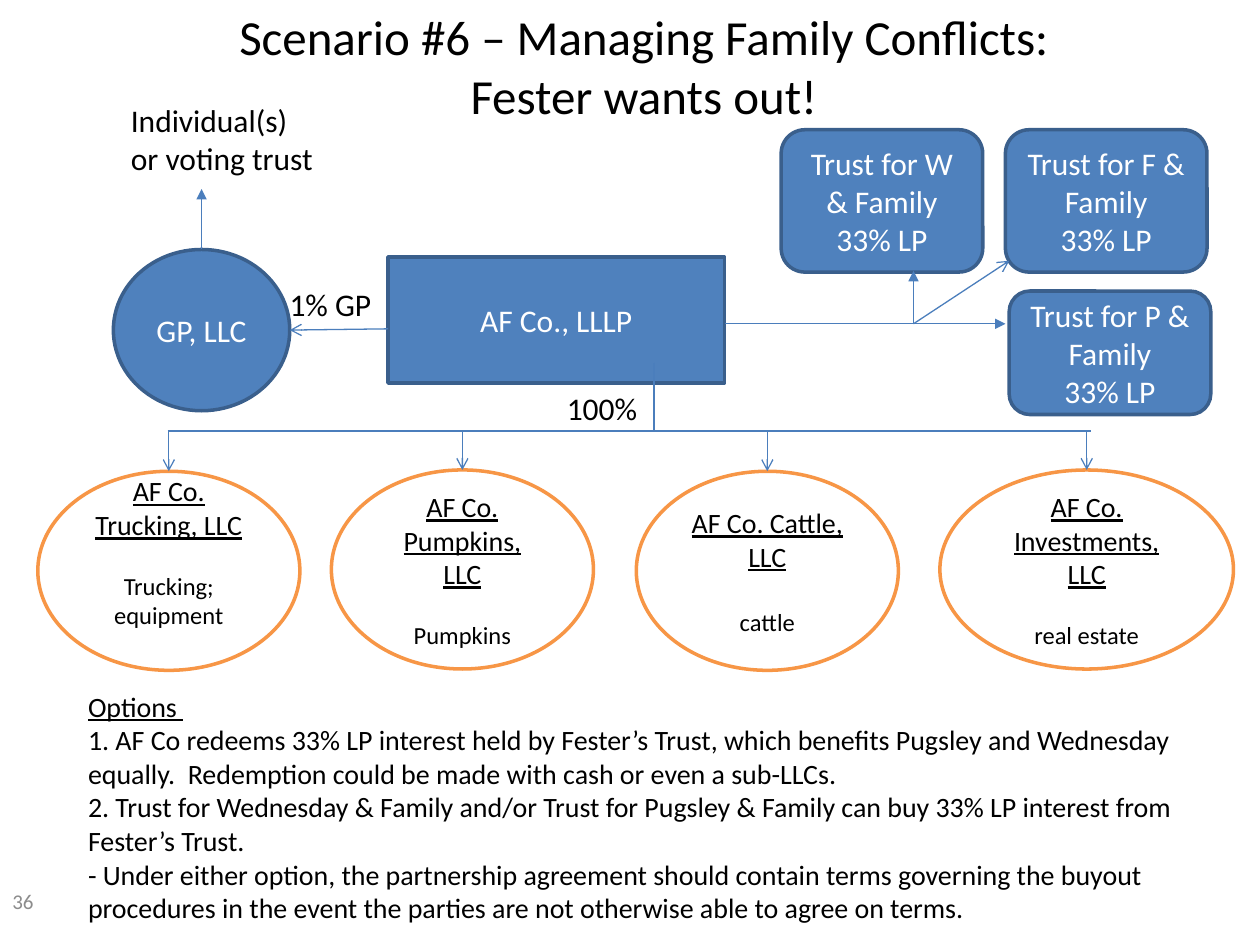
"""Build the family conflict slide: ownership chart above, buyout options below."""
from dataclasses import dataclass

from lxml.etree import SubElement
from pptx import Presentation
from pptx.dml.color import RGBColor as Color
from pptx.enum.shapes import MSO_CONNECTOR as Connector, MSO_SHAPE as Shape
from pptx.enum.text import MSO_ANCHOR as Anchor, PP_ALIGN as Align
from pptx.oxml.ns import qn
from pptx.util import Inches, Pt


@dataclass(frozen=True)
class Theme:
    font: str = "Calibri"
    black: str = "000000"
    white: str = "FFFFFF"
    grey: str = "8C8C8C"
    blue: str = "4F81BD"
    navy: str = "3A5F8C"
    orange: str = "F79646"
    wire: str = "4B7EBC"
    title: int = 28
    label: int = 18
    body: int = 16
    detail: int = 14
    number: int = 12
    outline: float = 2
    hairline: float = 0.75


theme = Theme()
presentation = Presentation()
presentation.slide_width, presentation.slide_height = Inches(10), Inches(7.5)
slide = presentation.slides.add_slide(presentation.slide_layouts[6])
column = presentation.slide_width / 100
row = presentation.slide_height / 75


def add_text(place, lines, size, color=theme.black, align=Align.LEFT, anchor=Anchor.TOP, look=None):
    """Add a text box, or a shape when look gives (preset, fill, outline)."""
    left, top, width, height = place
    box = (round(left * column), round(top * row), round(width * column), round(height * row))
    if look:
        preset, fill, outline = look
        shape = slide.shapes.add_shape(preset, *box)
        shape.shadow.inherit = False
        shape.fill.solid()
        shape.fill.fore_color.rgb = Color.from_string(fill)
        shape.line.color.rgb = Color.from_string(outline)
        shape.line.width = Pt(theme.outline)
    else:
        shape = slide.shapes.add_textbox(*box)
    frame = shape.text_frame
    frame.word_wrap = True
    frame.vertical_anchor = anchor
    frame.text = "\n".join(lines)
    for paragraph in frame.paragraphs:
        paragraph.alignment = align
        paragraph.font.name = theme.font
        paragraph.font.size = Pt(size)
        paragraph.font.color.rgb = Color.from_string(color)
    return shape


def add_line(start, end, head=None, source=None, target=None):
    """Add a thin line, optionally with an arrowhead and joined to shape tops."""
    line = slide.shapes.add_connector(
        Connector.STRAIGHT, round(start[0] * column), round(start[1] * row),
        round(end[0] * column), round(end[1] * row))
    if source:
        line.begin_connect(source, 0)
    if target:
        line.end_connect(target, 0)
    line.line.color.rgb = Color.from_string(theme.wire)
    line.line.width = Pt(theme.hairline)
    if head:
        SubElement(line.line._get_or_add_ln(), qn("a:tailEnd"), type=head)
    SubElement(line._element.spPr, qn("a:effectLst"))


add_text((6.1, 0.8, 90, 8.8), ["Scenario #6 – Managing Family Conflicts:\vFester wants out!"],
         theme.title, align=Align.CENTER, anchor=Anchor.MIDDLE)

# Partnership, general partner and limited partners
owners = [
    (Shape.RECTANGLE, (30.8, 20.4, 26.7, 10), ["AF Co., LLLP"]),
    (Shape.OVAL, (9, 19.8, 14, 12.8), ["GP, LLC"]),
    (Shape.ROUNDED_RECTANGLE, (62, 10.3, 16, 11.3), ["Trust for W & Family", "33% LP"]),
    (Shape.ROUNDED_RECTANGLE, (79.8, 10.3, 16, 11.3), ["Trust for F & Family", "33% LP"]),
    (Shape.ROUNDED_RECTANGLE, (80.1, 23.1, 16, 9.8), ["Trust for P & Family", "33% LP"]),
]
partnership, general_partner, *trusts = [
    add_text(place, lines, theme.label, theme.white, Align.CENTER, Anchor.MIDDLE,
             (preset, theme.blue, theme.navy))
    for preset, place, lines in owners]

add_line((16, 19.8), (16, 15), "triangle", source=general_partner)
add_line((30.8, 26.1), (23, 26.2), "arrow")
hub = (72.5, 25.7)
add_line(hub, (57.5, 25.7))
for end, head in [((80.1, 20.7), "arrow"), ((72.5, 21.5), "triangle"), ((79.8, 25.7), "triangle")]:
    add_line(hub, end, head)

# Subsidiaries hang from one rail: left, top, width, gap in points, bottom inset, texts
rail = 34.2
add_line((13.3, rail), (86.6, rail))
add_line((51.9, 28.8), (51.9, rail))
subsidiaries = [
    (3, 37.4, 20.8, 17, 0.35, "AF Co. Trucking, LLC", "Trucking; equipment"),
    (26.3, 37.3, 20.8, 17, 0.05, "AF Co. Pumpkins, LLC", "Pumpkins"),
    (50.5, 37.4, 20.8, 19.5, 0.05, "AF Co. Cattle, LLC", "cattle"),
    (74.6, 37.3, 23.3, 17, 0.05, "AF Co. Investments, LLC", "real estate"),
]
for left, top, width, gap, inset, company, business in subsidiaries:
    oval = add_text((left, top, width, 15.8), [company, business], theme.body, theme.black,
                    Align.CENTER, Anchor.MIDDLE, (Shape.OVAL, theme.white, theme.orange))
    oval.text_frame.margin_bottom = Inches(inset)
    name, detail = oval.text_frame.paragraphs
    name.font.underline = True
    detail.font.size = Pt(theme.detail)
    detail.space_before = Pt(gap)
    middle = left + width / 2
    add_line((middle, rail), (middle, top), "arrow", target=oval)

labels = [
    ((44, 30.4, 9.6, 4), "100%"),
    ((22, 22.1, 10, 4), "1% GP"),
    ((9.4, 7.5, 16.9, 7.1), "Individual(s) or voting trust"),
]
for place, label in labels:
    add_text(place, [label], theme.label)

options = add_text((6, 54.2, 88.9, 19.9), [
    "Options ",
    "1. AF Co redeems 33% LP interest held by Fester’s Trust, which benefits Pugsley and Wednesday "
    "equally.  Redemption could be made with cash or even a sub-LLCs.",
    "2. Trust for Wednesday & Family and/or Trust for Pugsley & Family can buy 33% LP interest from "
    "Fester’s Trust.",
    "- Under either option, the partnership agreement should contain terms governing the buyout "
    "procedures in the event the parties are not otherwise able to agree on terms.",
], theme.body)
options.text_frame.paragraphs[0].font.underline = True
add_text((0, 69.5, 23.3, 4), ["36"], theme.number, theme.grey, anchor=Anchor.MIDDLE)

presentation.save("out.pptx")
